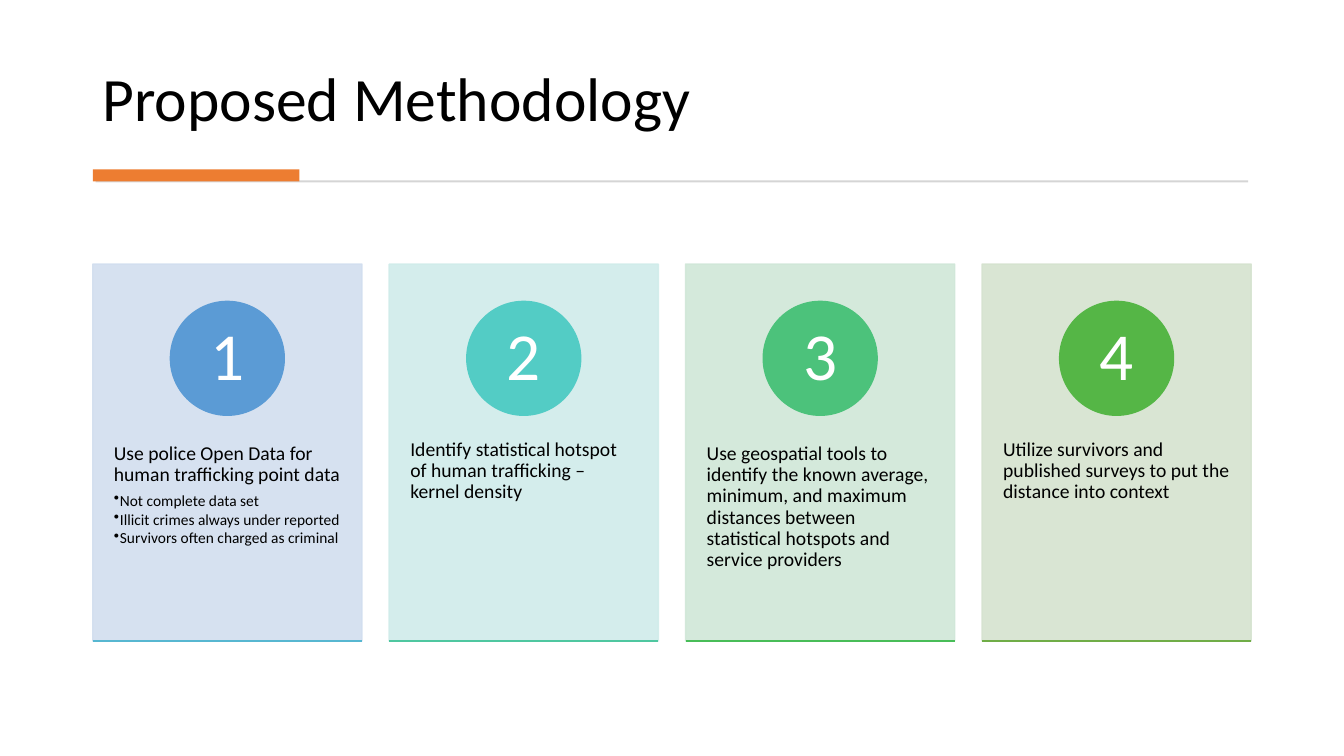
from dataclasses import dataclass

from lxml.etree import SubElement
from pptx import Presentation
from pptx.dml.color import RGBColor
from pptx.enum.shapes import MSO_CONNECTOR as Connector, MSO_SHAPE as Preset
from pptx.enum.text import MSO_ANCHOR as Anchor, PP_ALIGN as Align
from pptx.oxml.ns import qn
from pptx.shapes.autoshape import Shape
from pptx.slide import Slide
from pptx.text.text import TextFrame
from pptx.util import Inches, Pt

BLACK = RGBColor(0x00, 0x00, 0x00)
WHITE = RGBColor(0xFF, 0xFF, 0xFF)
RULE_GREY = RGBColor(0xD5, 0xD5, 0xD5)
ORANGE = RGBColor(0xED, 0x7D, 0x31)
PALE_BLUE = RGBColor(0xD2, 0xDE, 0xEF)
PALE_TEAL = RGBColor(0xD0, 0xEC, 0xEA)
PALE_MINT = RGBColor(0xD0, 0xE7, 0xD8)
PALE_GREEN = RGBColor(0xD5, 0xE3, 0xCF)
BLUE = RGBColor(0x5B, 0x9B, 0xD5)
TEAL = RGBColor(0x53, 0xCC, 0xC5)
MINT = RGBColor(0x4C, 0xC2, 0x7B)
GREEN = RGBColor(0x55, 0xB6, 0x46)
BLUE_EDGE = RGBColor(0x57, 0xB7, 0xD1)
TEAL_EDGE = RGBColor(0x4F, 0xC7, 0xA0)
MINT_EDGE = RGBColor(0x48, 0xBD, 0x58)
GREEN_EDGE = RGBColor(0x70, 0xAD, 0x47)

FONT = "Calibri"
LEFT = 0.92
CARD_TOP = 2.62
CARD_WIDTH = 2.67
CARD_HEIGHT = 3.74
CARD_PITCH = 2.94
BADGE_TOP = 2.99
BADGE_SIZE = 1.13
BODY_TOP = 4.04
BODY_HEIGHT = 2.25


@dataclass(frozen=True)
class Step:
    summary: str
    card: RGBColor
    badge: RGBColor
    edge: RGBColor
    details: tuple[str, ...] = ()


STEPS = (
    Step(
        "Use police Open Data for human trafficking point data",
        PALE_BLUE, BLUE, BLUE_EDGE,
        (
            "Not complete data set",
            "Illicit crimes always under reported",
            "Survivors often charged as criminal",
        ),
    ),
    Step(
        "Identify statistical hotspot of human trafficking – kernel density",
        PALE_TEAL, TEAL, TEAL_EDGE,
    ),
    Step(
        "Use geospatial tools to identify the known average, minimum, and maximum "
        "distances between statistical hotspots and service providers",
        PALE_MINT, MINT, MINT_EDGE,
    ),
    Step(
        "Utilize survivors and published surveys to put the distance into context",
        PALE_GREEN, GREEN, GREEN_EDGE,
    ),
)


def set_frame(frame: TextFrame, anchor: Anchor, inset_x: float, inset_y: float) -> None:
    frame.word_wrap = True
    frame.vertical_anchor = anchor
    frame.margin_left = frame.margin_right = Inches(inset_x)
    frame.margin_top = frame.margin_bottom = Inches(inset_y)


def write(
    frame: TextFrame,
    text: str,
    *,
    size: float,
    color: RGBColor = BLACK,
    align: Align = Align.LEFT,
    after: float = 0,
    bullet: bool = False,
) -> None:
    paragraph = frame.add_paragraph() if frame.text else frame.paragraphs[0]
    paragraph.alignment = align
    paragraph.line_spacing = 0.9
    paragraph.space_after = Pt(after)
    if bullet:
        paragraph.level = 1
        properties = paragraph._p.get_or_add_pPr()
        properties.set("marL", str(Inches(0.06)))
        properties.set("indent", str(-Inches(0.06)))
        SubElement(properties, qn("a:buChar")).set("char", "•")
    run = paragraph.add_run()
    run.text = text
    run.font.name = FONT
    run.font.size = Pt(size)
    run.font.color.rgb = color


def add_block(
    slide: Slide,
    preset: Preset,
    left: float,
    top: float,
    width: float,
    height: float,
    color: RGBColor,
    *,
    outlined: bool = False,
    opacity: int = 100,
) -> Shape:
    block = slide.shapes.add_shape(
        preset, Inches(left), Inches(top), Inches(width), Inches(height)
    )
    block.shadow.inherit = False
    block.fill.solid()
    block.fill.fore_color.rgb = color
    if outlined:
        block.line.color.rgb = color
        block.line.width = Pt(1)
    else:
        block.line.fill.background()
    if opacity < 100:
        for tint in block._element.spPr.iter(qn("a:srgbClr")):
            SubElement(tint, qn("a:alpha")).set("val", str(opacity * 1000))
    return block


def add_text_frame(
    slide: Slide, left: float, top: float, width: float, height: float
) -> TextFrame:
    return slide.shapes.add_textbox(
        Inches(left), Inches(top), Inches(width), Inches(height)
    ).text_frame


def add_edge(slide: Slide, left: float, top: float, width: float, color: RGBColor) -> None:
    edge = slide.shapes.add_connector(
        Connector.STRAIGHT, Inches(left), Inches(top), Inches(left + width), Inches(top)
    )
    edge.line.color.rgb = color
    edge.line.width = Pt(1)
    SubElement(edge._element.spPr, qn("a:effectLst"))


def add_header(slide: Slide) -> None:
    title = add_text_frame(slide, LEFT, 0.28, 11.49, 1.11)
    set_frame(title, Anchor.BOTTOM, 0.1, 0.05)
    write(title, "Proposed Methodology", size=44)
    add_block(slide, Preset.RECTANGLE, 0.95, 1.79, 11.43, 0.02, RULE_GREY)
    add_block(slide, Preset.RECTANGLE, LEFT, 1.68, 2.05, 0.12, ORANGE)


def add_step(slide: Slide, number: int, step: Step) -> None:
    left = LEFT + (number - 1) * CARD_PITCH
    add_block(
        slide, Preset.RECTANGLE, left, CARD_TOP, CARD_WIDTH, CARD_HEIGHT, step.card,
        outlined=True, opacity=90,
    )

    body = add_text_frame(slide, left, BODY_TOP, CARD_WIDTH, BODY_HEIGHT)
    set_frame(body, Anchor.TOP, 0.21, 0.36)
    write(body, step.summary, size=14, after=4.9)
    for detail in step.details:
        write(body, detail, size=11, after=1.65, bullet=True)

    badge = add_block(
        slide, Preset.OVAL, left + (CARD_WIDTH - BADGE_SIZE) / 2, BADGE_TOP,
        BADGE_SIZE, BADGE_SIZE, step.badge, outlined=True,
    )
    set_frame(badge.text_frame, Anchor.MIDDLE, 0.09, 0.01)
    write(badge.text_frame, str(number), size=48, color=WHITE, align=Align.CENTER)

    add_edge(slide, left, CARD_TOP + CARD_HEIGHT, CARD_WIDTH, step.edge)


def main() -> None:
    deck = Presentation()
    deck.slide_width = Inches(13.33)
    deck.slide_height = Inches(7.5)
    slide = deck.slides.add_slide(deck.slide_layouts[6])
    add_header(slide)
    for number, step in enumerate(STEPS, start=1):
        add_step(slide, number, step)
    deck.save("out.pptx")


if __name__ == "__main__":
    main()
